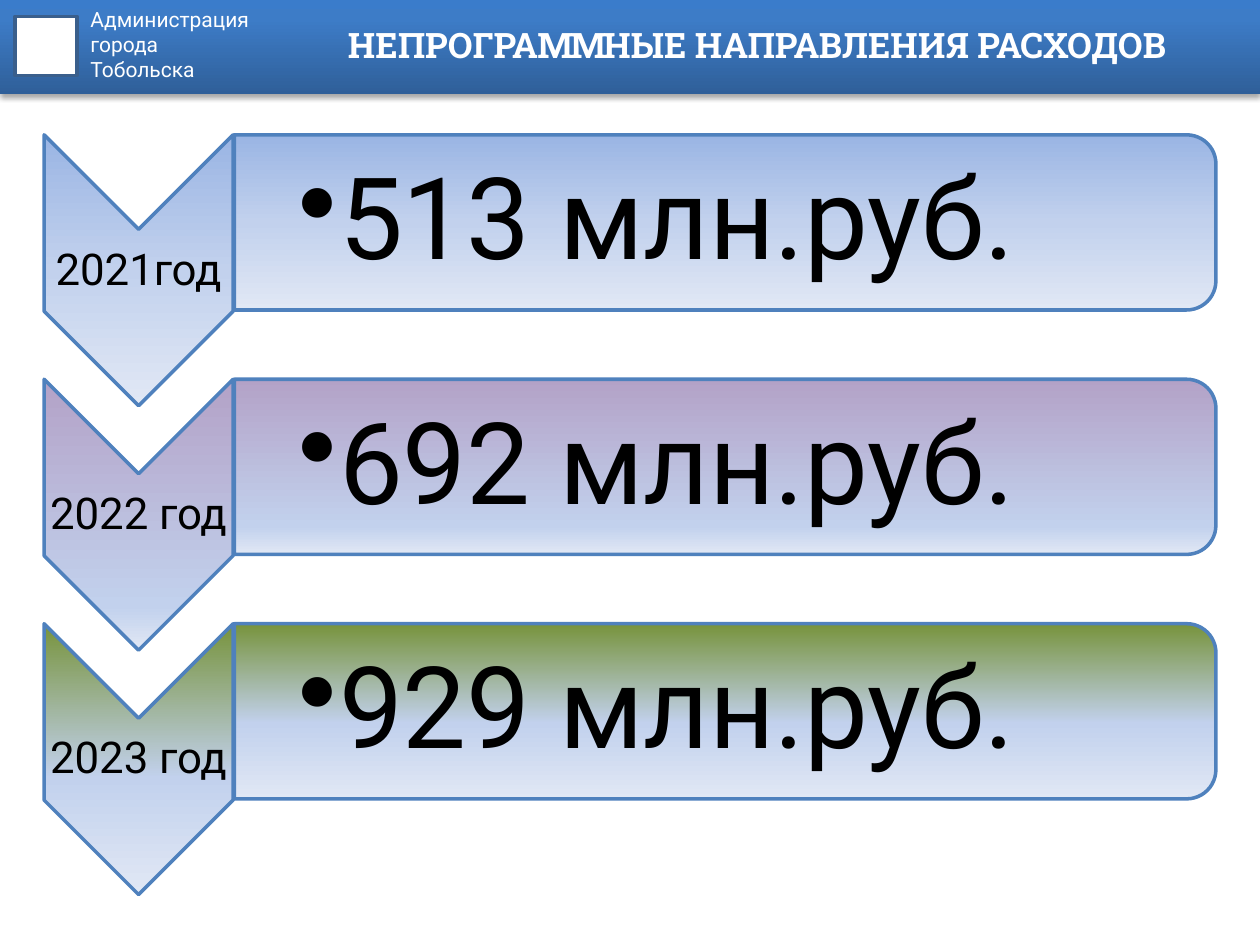
from dataclasses import dataclass

from lxml import etree
from pptx import Presentation
from pptx.dml.color import RGBColor
from pptx.enum.shapes import MSO_SHAPE
from pptx.enum.text import MSO_ANCHOR, PP_ALIGN
from pptx.oxml.ns import qn
from pptx.shapes.autoshape import Shape
from pptx.slide import Slide
from pptx.text.text import _Paragraph
from pptx.util import Inches, Pt

RECTANGLE = MSO_SHAPE.RECTANGLE
CHEVRON = MSO_SHAPE.CHEVRON
ROUNDED_BAR = MSO_SHAPE.ROUND_2_SAME_RECTANGLE
TOP, MIDDLE = MSO_ANCHOR.TOP, MSO_ANCHOR.MIDDLE
LEFT, CENTER = PP_ALIGN.LEFT, PP_ALIGN.CENTER

WHITE = RGBColor(0xFF, 0xFF, 0xFF)
BLACK = RGBColor(0x00, 0x00, 0x00)
OUTLINE = RGBColor(0x4F, 0x81, 0xBD)
EMBLEM_OUTLINE = RGBColor(0x3A, 0x5F, 0x8C)
HEADER_DARK = RGBColor(0x2F, 0x5F, 0x99)
HEADER_MID = RGBColor(0x3D, 0x7C, 0xC7)
HEADER_LIGHT = RGBColor(0x3A, 0x7C, 0xCB)
BLUE = RGBColor(0x9A, 0xB5, 0xE4)
PURPLE = RGBColor(0xB3, 0xA2, 0xC7)
GREEN = RGBColor(0x77, 0x93, 0x3C)
PALE_BLUE = RGBColor(0xC2, 0xD1, 0xED)
PALEST_BLUE = RGBColor(0xE1, 0xE8, 0xF5)

BODY_FONT, TITLE_FONT = "Roboto", "Roboto Slab"
FIRST_ROW_TOP, ROW_PITCH = 1.07, 1.94
Stops = list[tuple[int, RGBColor]]


@dataclass(frozen=True)
class Box:
    left: float
    top: float
    width: float
    height: float


@dataclass(frozen=True)
class YearExpense:
    year: str
    amount: str
    color: RGBColor
    middle_stop: int


EXPENSES = [
    YearExpense("2021год", "513 млн.руб.", BLUE, 50),
    YearExpense("2022 год", "692 млн.руб.", PURPLE, 84),
    YearExpense("2023 год", "929 млн.руб.", GREEN, 57),
]


def set_gradient(shape: Shape, stops: Stops, angle: int) -> None:
    gradient = etree.Element(qn("a:gradFill"), rotWithShape="0")
    stop_list = etree.SubElement(gradient, qn("a:gsLst"))
    for position, color in stops:
        stop = etree.SubElement(stop_list, qn("a:gs"), pos=str(position * 1000))
        etree.SubElement(stop, qn("a:srgbClr"), val=str(color))
    etree.SubElement(gradient, qn("a:lin"), ang=str(angle * 60000), scaled="0")
    shape.element.spPr.find(qn("a:prstGeom")).addnext(gradient)


def add_header_shadow(shape: Shape) -> None:
    effects = shape.element.spPr.find(qn("a:effectLst"))
    shadow = etree.SubElement(
        effects, qn("a:outerShdw"), blurRad=str(Pt(3.1)), dist=str(Pt(1.8)),
        dir="5400000", rotWithShape="0")
    color = etree.SubElement(shadow, qn("a:srgbClr"), val=str(BLACK))
    etree.SubElement(color, qn("a:alpha"), val="35000")


def add_block(slide: Slide, kind: MSO_SHAPE, box: Box) -> Shape:
    shape = slide.shapes.add_shape(
        kind, Inches(box.left), Inches(box.top), Inches(box.width), Inches(box.height))
    shape.shadow.inherit = False
    return shape


def add_turned_block(slide: Slide, kind: MSO_SHAPE, seen: Box, stops: Stops) -> None:
    shift = (seen.width - seen.height) / 2
    shape = add_block(slide, kind, Box(
        seen.left + shift, seen.top - shift, seen.height, seen.width))
    shape.rotation = 90
    set_gradient(shape, stops, 90)
    shape.line.color.rgb = OUTLINE
    shape.line.width = Pt(2)


def add_text(slide: Slide, box: Box, lines: list[str], size: int, color: RGBColor,
             font: str = BODY_FONT, bold: bool = False, anchor: MSO_ANCHOR = MIDDLE,
             align: PP_ALIGN = CENTER, margin: float = 0.05,
             left_margin: float = 0.1) -> list[_Paragraph]:
    frame = slide.shapes.add_textbox(
        Inches(box.left), Inches(box.top), Inches(box.width), Inches(box.height)).text_frame
    frame.word_wrap = True
    frame.vertical_anchor = anchor
    frame.margin_top = frame.margin_bottom = frame.margin_right = Inches(margin)
    frame.margin_left = Inches(left_margin)
    frame.text = "\n".join(lines)
    for paragraph in frame.paragraphs:
        paragraph.alignment = align
        paragraph.font.name = font
        paragraph.font.size = Pt(size)
        paragraph.font.bold = bold
        paragraph.font.color.rgb = color
    return list(frame.paragraphs)


def set_spacing(paragraph: _Paragraph, after_percent: int) -> None:
    paragraph.line_spacing = 0.9
    spacing = etree.Element(qn("a:spcAft"))
    etree.SubElement(spacing, qn("a:spcPct"), val=str(after_percent * 1000))
    paragraph._p.pPr.find(qn("a:lnSpc")).addnext(spacing)


def set_bullet(paragraph: _Paragraph) -> None:
    properties = paragraph._p.pPr
    properties.set("marL", str(Inches(0.31)))
    properties.set("indent", str(Inches(-0.31)))
    bullet = etree.Element(qn("a:buChar"), char="•")
    properties.find(qn("a:spcAft")).addnext(bullet)


def draw_header(slide: Slide) -> None:
    banner = add_block(slide, RECTANGLE, Box(0, 0, 10, 0.75))
    set_gradient(banner, [(0, HEADER_DARK), (80, HEADER_MID), (100, HEADER_LIGHT)], 270)
    banner.line.fill.background()
    add_header_shadow(banner)
    emblem = add_block(slide, RECTANGLE, Box(0.12, 0.13, 0.49, 0.47))
    emblem.fill.solid()
    emblem.fill.fore_color.rgb = WHITE
    emblem.line.color.rgb = EMBLEM_OUTLINE
    emblem.line.width = Pt(2)
    add_text(slide, Box(0.62, 0, 2.34, 0.91), ["Администрация", "города", "Тобольска"],
             12, WHITE, anchor=TOP, align=LEFT)
    add_text(slide, Box(1.97, 0, 8.03, 0.71), ["НЕПРОГРАММНЫЕ НАПРАВЛЕНИЯ РАСХОДОВ"],
             20, WHITE, font=TITLE_FONT, bold=True)


def draw_expense(slide: Slide, expense: YearExpense, top: float) -> None:
    stops = [(0, expense.color), (expense.middle_stop, PALE_BLUE), (100, PALEST_BLUE)]
    add_turned_block(slide, CHEVRON, Box(0.35, top, 1.5, 2.15), stops)
    year, = add_text(slide, Box(0.35, top + 0.76, 1.5, 0.64), [expense.year], 25, BLACK,
                     margin=0.02, left_margin=0.02)
    set_spacing(year, 35)
    add_turned_block(slide, ROUNDED_BAR, Box(1.86, top, 7.79, 1.39), stops)
    amount, = add_text(slide, Box(1.86, top + 0.07, 7.72, 1.26), [expense.amount], 65, BLACK,
                       align=LEFT, left_margin=0.51)
    amount.level = 1
    set_spacing(amount, 15)
    set_bullet(amount)


def main() -> None:
    presentation = Presentation()
    presentation.slide_width = Inches(10)
    presentation.slide_height = Inches(7.5)
    slide = presentation.slides.add_slide(presentation.slide_layouts[6])
    draw_header(slide)
    for row, expense in enumerate(EXPENSES):
        draw_expense(slide, expense, FIRST_ROW_TOP + row * ROW_PITCH)
    presentation.save("out.pptx")


if __name__ == "__main__":
    main()
